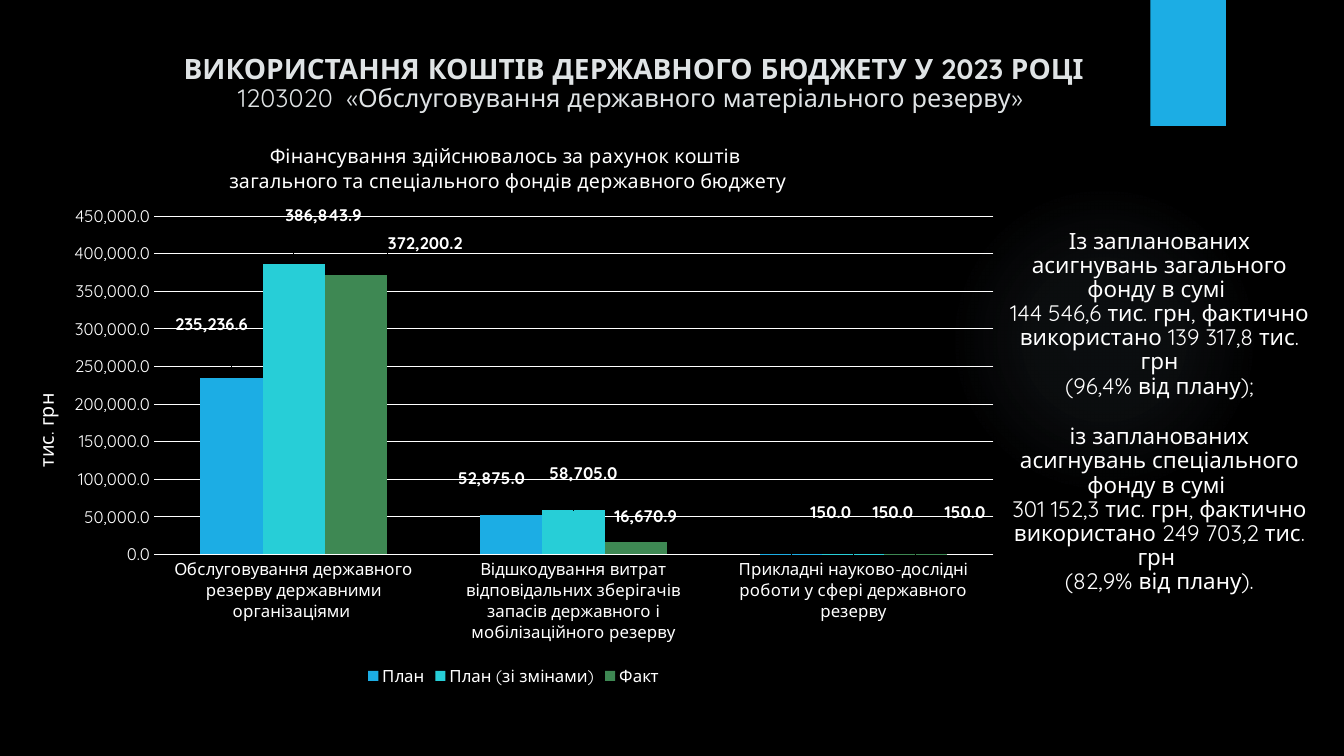
from lxml.etree import SubElement
from pptx import Presentation
from pptx.chart.data import CategoryChartData
from pptx.dml.color import RGBColor
from pptx.enum.chart import XL_CHART_TYPE, XL_LABEL_POSITION, XL_LEGEND_POSITION, XL_TICK_MARK
from pptx.enum.shapes import MSO_SHAPE
from pptx.enum.text import PP_ALIGN
from pptx.oxml import parse_xml
from pptx.oxml.ns import nsdecls, qn
from pptx.util import Inches, Pt

COLORS = {"back": "000000", "white": "FFFFFF", "heading": "DFE3E5", "glow": "A0C1D5",
          "plan": "1CADE4", "revised": "27CED7", "actual": "3E8853"}
FONT = "Quicksand"
NUMBER_FORMAT = "#,##0.0"


class BudgetSlide:
    """Holds the style of the budget slide and draws its elements."""

    def __init__(self, presentation):
        self.slide = presentation.slides.add_slide(presentation.slide_layouts[6])
        self.paint(self.slide.background.fill, "back")

    def paint(self, fill, color):
        fill.solid()
        fill.fore_color.rgb = RGBColor.from_string(COLORS[color])

    def style(self, font, size, color="white", bold=False):
        font.name, font.size, font.bold = FONT, Pt(size), bold
        font.color.rgb = RGBColor.from_string(COLORS[color])

    def shape(self, kind, box):
        shape = self.slide.shapes.add_shape(kind, *map(Inches, box))
        shape.shadow.inherit = False
        shape.line.fill.background()
        return shape

    def ribbon(self, box, color):
        self.paint(self.shape(MSO_SHAPE.RECTANGLE, box).fill, color)

    def glow(self, box, stops):
        glow = self.shape(MSO_SHAPE.OVAL, box)
        stop_xml = "".join(
            f'<a:gs pos="{place * 1000}"><a:srgbClr val="{COLORS["glow"]}">'
            f'<a:alpha val="{alpha * 1000}"/></a:srgbClr></a:gs>' for place, alpha in stops)
        gradient = parse_xml(
            f'<a:gradFill {nsdecls("a")} rotWithShape="1"><a:gsLst>{stop_xml}</a:gsLst>'
            '<a:path path="circle"><a:fillToRect l="50000" t="50000" r="50000" b="50000"/>'
            '</a:path></a:gradFill>')
        glow._element.spPr.find(qn("a:prstGeom")).addnext(gradient)

    def text(self, box, lines, color):
        frame = self.slide.shapes.add_textbox(*map(Inches, box)).text_frame
        frame.word_wrap = True
        frame.text = "\n".join(line for line, *_ in lines)
        for paragraph, (_, size, bold, gap) in zip(frame.paragraphs, lines):
            paragraph.alignment = PP_ALIGN.CENTER
            paragraph.line_spacing = 0.9
            paragraph.space_before = Pt(gap)
            for run in paragraph.runs:
                self.style(run.font, size, color, bold)

    def layout(self, **values):
        layout = parse_xml(f'<c:layout {nsdecls("c")}><c:manualLayout/></c:layout>')
        for name, value in values.items():
            SubElement(layout[0], qn(f"c:{name}")).set("val", str(value))
        return layout

    def caption(self, title, text, x, y):
        title.text_frame.text = text
        for paragraph in title.text_frame.paragraphs:
            self.style(paragraph.font, 14)
            for run in paragraph.runs:
                self.style(run.font, 14)
        for old in title._element.findall(qn("c:layout")):
            title._element.remove(old)
        title._element.find(qn("c:tx")).addnext(
            self.layout(xMode="edge", yMode="edge", x=x, y=y))

    def axis(self, axis):
        axis.major_tick_mark = axis.minor_tick_mark = XL_TICK_MARK.NONE
        axis.format.line.fill.background()
        self.style(axis.tick_labels.font, 12)

    def labels(self, series, offsets):
        labels = series.data_labels
        labels.show_value = True
        labels.number_format, labels.number_format_is_linked = NUMBER_FORMAT, False
        self.style(labels.font, 12, bold=True)
        for index, (x, y) in enumerate(offsets):
            label = series.points[index].data_label
            self.style(label.font, 12, bold=True)
            label.position = XL_LABEL_POSITION.OUTSIDE_END
        for point, (x, y) in zip(series._element.xpath(".//c:dLbl"), offsets):
            point.find(qn("c:idx")).addnext(self.layout(x=x, y=y))

    def column_chart(self, box, title, unit, categories, funds):
        data = CategoryChartData(number_format=NUMBER_FORMAT)
        data.categories = categories
        for name, _, values, _ in funds:
            data.add_series(name, values)
        chart = self.slide.shapes.add_chart(
            XL_CHART_TYPE.COLUMN_CLUSTERED, *map(Inches, box), data).chart
        self.style(chart.font, 10)
        chart.has_title = True
        self.caption(chart.chart_title, title, 0.21, 0.01)
        chart.chart_title.include_in_layout = False
        chart.has_legend = True
        chart.legend.position = XL_LEGEND_POSITION.BOTTOM
        chart.legend.include_in_layout = False
        self.style(chart.legend.font, 12)

        amounts = chart.value_axis
        self.axis(chart.category_axis)
        self.axis(amounts)
        amounts.minimum_scale, amounts.maximum_scale, amounts.major_unit = 0, 450000, 50000
        amounts.tick_labels.number_format = NUMBER_FORMAT
        amounts.tick_labels.number_format_is_linked = False
        amounts.has_title = True
        self.caption(amounts.axis_title, unit, 0.01, 0.46)
        grid = amounts.major_gridlines.format.line
        self.paint(grid.fill, "white")
        grid.width = Pt(0.75)

        plot = chart.plots[0]
        plot.gap_width, plot.overlap, plot.vary_by_categories = 150, 0, False
        for series, (_, color, _, offsets) in zip(plot.series, funds):
            self.paint(series.format.fill, color)
            self.labels(series, offsets)
        area = chart._chartSpace.chart.plotArea
        for old in area.findall(qn("c:layout")):
            area.remove(old)
        area.insert(0, self.layout(layoutTarget="inner", xMode="edge", yMode="edge",
                                   x=0.137, y=0.149, w=0.847, h=0.607))


def main():
    presentation = Presentation()
    presentation.slide_width, presentation.slide_height = Inches(13.33), Inches(7.5)
    budget = BudgetSlide(presentation)
    budget.glow((9.41, 1.83, 3.08, 3.08), [(0, 7), (36, 6), (69, 0)])
    budget.ribbon((11.41, 0, 0.75, 1.25), "plan")
    budget.text((1.16, 0.5, 10.25, 0.82), [
        ("ВИКОРИСТАННЯ КОШТІВ ДЕРЖАВНОГО БЮДЖЕТУ У 2023 РОЦІ", 20, True, 0),
        ("1203020  «Обслуговування державного матеріального резерву» ", 18, False, 0),
    ], "heading")
    budget.column_chart(
        (0.18, 1.32, 9.83, 5.53),
        "Фінансування здійснювалось за рахунок коштів \n"
        "загального та спеціального фондів державного бюджету",
        "тис. грн",
        ["Обслуговування державного резерву державними організаціями ",
         "Відшкодування витрат відповідальних зберігачів запасів державного і "
         "мобілізаційного резерву",
         "Прикладні науково-дослідні роботи у сфері державного резерву"],
        [("План", "plan", (235236.6, 52875, 150),
          [(-0.02, -0.07), (-0.02, -0.04), (0.04, -0.05)]),
         ("План (зі змінами)", "revised", (386843.9, 58705, 150),
          [(0.03, -0.06), (0.01, -0.04), (0.04, -0.05)]),
         ("Факт", "actual", (372200.2, 16670.9, 150),
          [(0.07, -0.03), (0.01, -0.02), (0.05, -0.05)])])
    spending = [
        ("Із запланованих асигнувань загального фонду в сумі ", 0),
        ("144 546,6 тис. грн, фактично використано 139 317,8 тис. грн", 0),
        ("(96,4% від плану);", 0),
        ("із запланованих асигнувань спеціального фонду в сумі ", 19),
        ("301 152,3 тис. грн, фактично використано 249 703,2 тис. грн ", 0),
        ("(82,9% від плану).", 0)]
    budget.text((9.88, 2.23, 3.24, 4.45),
                [(line, 16, False, gap) for line, gap in spending], "white")
    presentation.save("out.pptx")


if __name__ == "__main__":
    main()
